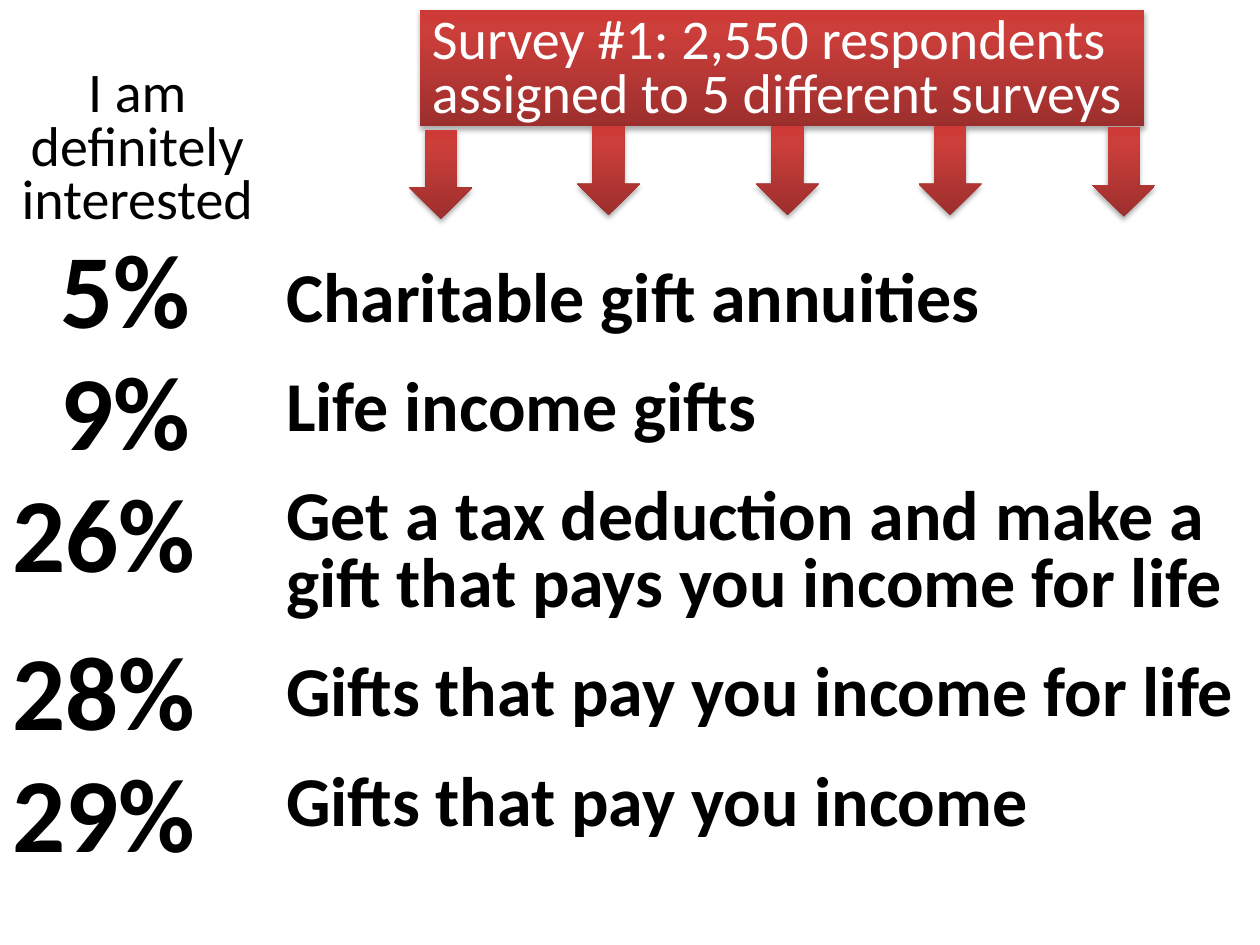
import pptx
import pptx.dml.color
import pptx.enum.shapes
import pptx.enum.text
import pptx.oxml
import pptx.oxml.ns
import pptx.util
from pptx.util import Inches

COLOURS = {"text": "000000", "banner_text": "FFFFFF", "shadow": "000000",
           "dark": "9C2F2D", "middle": "CB3E3A", "light": "CE3B37"}
FONT = "Calibri"

HEADING = "I am definitely interested"
BANNER = "Survey #1: 2,550 respondents assigned to 5 different surveys"
RESULTS = [
    ("5%", "Charitable gift annuities"),
    ("9%", "Life income gifts"),
    ("26%", "Get a tax deduction and make a gift that pays you income for life"),
    ("28%", "Gifts that pay you income for life"),
    ("29%", "Gifts that pay you income"),
]
ARROWS = [(3.25, 1.03), (4.58, 1), (6, 1), (7.29, 1), (8.67, 1.01)]
ONE_DIGIT_INDENT = 0.38
TWO_LINE_GAP = 33

NAMESPACE = pptx.oxml.ns.nsdecls("a")
STOPS = [(0, "dark"), (80, "middle"), (100, "light")]
GRADIENT = (
    f'<a:gradFill {NAMESPACE} rotWithShape="1"><a:gsLst>'
    + "".join(f'<a:gs pos="{position * 1000}"><a:srgbClr val="{COLOURS[name]}"/></a:gs>'
              for position, name in STOPS)
    + '</a:gsLst><a:lin ang="16200000" scaled="0"/></a:gradFill>'
)
SHADOW = (
    f'<a:outerShdw {NAMESPACE} blurRad="39370" dist="22860" dir="5400000" rotWithShape="0">'
    f'<a:srgbClr val="{COLOURS["shadow"]}"><a:alpha val="35000"/></a:srgbClr></a:outerShdw>'
)


def place(shape, left, top, width, height):
    shape.left, shape.top = Inches(left), Inches(top)
    shape.width, shape.height = Inches(width), Inches(height)


def write(shape, lines, size, space_after, bold=False, colour="text",
          alignment=pptx.enum.text.PP_ALIGN.LEFT):
    frame = shape.text_frame
    frame.word_wrap = True
    frame.auto_size = pptx.enum.text.MSO_AUTO_SIZE.NONE
    frame.vertical_anchor = pptx.enum.text.MSO_ANCHOR.TOP
    frame.text = "\n".join(lines)
    for paragraph in frame.paragraphs:
        properties = paragraph._p.get_or_add_pPr()
        properties.set("marL", "0")
        properties.set("indent", "0")
        properties.append(pptx.oxml.parse_xml(f"<a:buNone {NAMESPACE}/>"))
        paragraph.alignment = alignment
        paragraph.line_spacing = 0.8
        paragraph.space_before = pptx.util.Pt(0)
        paragraph.space_after = pptx.util.Pt(space_after)
        paragraph.font.name = FONT
        paragraph.font.size = pptx.util.Pt(size)
        paragraph.font.bold = bold
        paragraph.font.color.rgb = pptx.dml.color.RGBColor.from_string(COLOURS[colour])


def add_red_shape(slide, kind, left, top, width, height):
    shape = slide.shapes.add_shape(
        kind, Inches(left), Inches(top), Inches(width), Inches(height))
    shape.line.fill.background()
    shape.shadow.inherit = False
    properties = shape._element.spPr
    properties.find(pptx.oxml.ns.qn("a:prstGeom")).addnext(pptx.oxml.parse_xml(GRADIENT))
    properties.find(pptx.oxml.ns.qn("a:effectLst")).append(pptx.oxml.parse_xml(SHADOW))
    return shape


def main():
    presentation = pptx.Presentation()
    presentation.slide_width, presentation.slide_height = Inches(10), Inches(7.5)
    slide = presentation.slides.add_slide(presentation.slide_layouts[3])
    heading, percentages, descriptions = slide.placeholders

    place(heading, 0.01, 0.5, 2.16, 1.21)
    write(heading, [HEADING], 32, 24, alignment=pptx.enum.text.PP_ALIGN.CENTER)

    place(percentages, 0, 1.92, 2.08, 4.75)
    write(percentages, [percentage for percentage, _ in RESULTS], 60, 12, bold=True)
    for paragraph, (percentage, description) in zip(percentages.text_frame.paragraphs, RESULTS):
        if len(percentage) == 2:
            paragraph._p.pPr.set("marL", str(Inches(ONE_DIGIT_INDENT)))
        if len(description) > 40:
            paragraph.space_after = pptx.util.Pt(TWO_LINE_GAP)

    place(descriptions, 2.17, 2.08, 7.75, 4.75)
    write(descriptions, [description for _, description in RESULTS], 40, 24, bold=True)

    shapes = pptx.enum.shapes.MSO_SHAPE
    banner = add_red_shape(slide, shapes.RECTANGLE, 3.33, 0.08, 5.75, 0.92)
    write(banner, [BANNER], 32, 24, colour="banner_text")
    for left, top in ARROWS:
        add_red_shape(slide, shapes.DOWN_ARROW, left, top, 0.5, 0.71)

    presentation.save("out.pptx")


if __name__ == "__main__":
    main()
